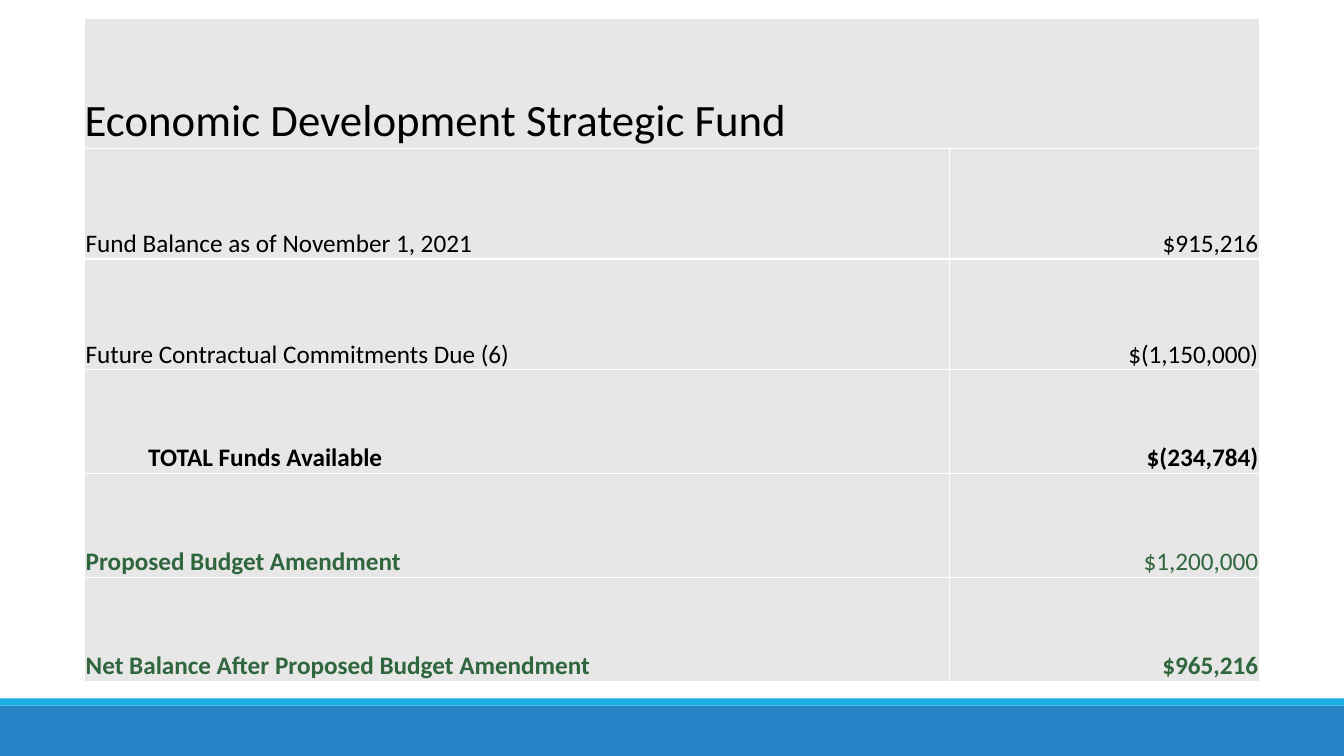
"""Build the Economic Development Strategic Fund slide."""
import dataclasses

import lxml.etree
import pptx
import pptx.dml.color
import pptx.enum.shapes
import pptx.enum.text
import pptx.oxml.ns
import pptx.util

EMU_PER_PX = 9144
FONT = "Calibri"
BLACK, GREEN, WHITE, GREY = "000000", "2F663E", "FFFFFF", "E7E7E7"
COLUMN_WIDTHS = (858, 307)
TITLE_HEIGHT = 129


@dataclasses.dataclass(frozen=True)
class Band:
    top: int
    height: int
    color: str


@dataclasses.dataclass(frozen=True)
class FundRow:
    label: str
    amount: str
    height: int
    color: str = BLACK
    label_bold: bool = False
    amount_bold: bool = False
    indent: int = 0


BANDS = (Band(700, 50, "2683C6"), Band(693, 7, "1CADE4"))
FUND_ROWS = (
    FundRow("Fund Balance as of November 1, 2021", "$915,216", 110),
    FundRow("Future Contractual Commitments Due (6)", "$(1,150,000)", 110),
    FundRow("TOTAL Funds Available", "$(234,784)", 103,
            label_bold=True, amount_bold=True, indent=62),
    FundRow("Proposed Budget Amendment", "$1,200,000", 103, GREEN, label_bold=True),
    FundRow("Net Balance After Proposed Budget Amendment", "$965,216", 103, GREEN,
            label_bold=True, amount_bold=True),
)


def px(length: int) -> pptx.util.Emu:
    """Turn px into EMU."""
    return pptx.util.Emu(length * EMU_PER_PX)


def rgb(color: str) -> pptx.dml.color.RGBColor:
    """Turn a hex string into a colour."""
    return pptx.dml.color.RGBColor.from_string(color)


def draw_band(slide, band: Band, width: int) -> None:
    """Draw one footer band across the slide."""
    shape = slide.shapes.add_shape(
        pptx.enum.shapes.MSO_SHAPE.RECTANGLE, px(0), px(band.top), px(width), px(band.height))
    shape.shadow.inherit = False
    shape.fill.solid()
    shape.fill.fore_color.rgb = rgb(band.color)
    shape.line.fill.background()


def style_cell(cell, margin: int) -> None:
    """Give a cell its borders, fill, margins and anchor."""
    qn = pptx.oxml.ns.qn
    properties = cell._tc.get_or_add_tcPr()
    for side in ("a:lnL", "a:lnR", "a:lnT", "a:lnB"):
        line = lxml.etree.SubElement(properties, qn(side), w=str(pptx.util.Pt(1)))
        fill = lxml.etree.SubElement(line, qn("a:solidFill"))
        lxml.etree.SubElement(fill, qn("a:srgbClr"), val=WHITE)
    cell.fill.solid()
    cell.fill.fore_color.rgb = rgb(GREY)
    cell.margin_left = cell.margin_right = cell.margin_top = px(margin)
    cell.margin_bottom = px(0)
    cell.vertical_anchor = pptx.enum.text.MSO_ANCHOR.BOTTOM


def write_cell(cell, text: str, size: int, color: str = BLACK, bold: bool = False,
               right: bool = False, indent: int = 0) -> None:
    """Write one run of text into a cell."""
    paragraph = cell.text_frame.paragraphs[0]
    alignment = pptx.enum.text.PP_ALIGN
    paragraph.alignment = alignment.RIGHT if right else alignment.LEFT
    if indent:
        paragraph._p.get_or_add_pPr().set("marL", str(px(indent)))
    run = paragraph.add_run()
    run.text = text
    run.font.name = FONT
    run.font.size = pptx.util.Pt(size)
    run.font.bold = bold
    run.font.color.rgb = rgb(color)


def draw_fund_table(slide) -> None:
    """Draw the fund table with its merged title row."""
    heights = (TITLE_HEIGHT, *(row.height for row in FUND_ROWS))
    table = slide.shapes.add_table(
        len(heights), len(COLUMN_WIDTHS), px(84), px(18),
        px(sum(COLUMN_WIDTHS)), px(sum(heights))).table
    table.first_row = table.horz_banding = False
    for column, width in zip(table.columns, COLUMN_WIDTHS):
        column.width = px(width)
    for index, height in enumerate(heights):
        table.rows[index].height = px(height)
        for cell in table.rows[index].cells:
            style_cell(cell, 1 if index else 0)
    title = table.cell(0, 0)
    title.merge(table.cell(0, 1))
    write_cell(title, "Economic Development Strategic Fund", 32)
    for index, row in enumerate(FUND_ROWS, start=1):
        write_cell(table.cell(index, 0), row.label, 18, row.color, row.label_bold,
                   indent=row.indent)
        write_cell(table.cell(index, 1), row.amount, 18, row.color, row.amount_bold,
                   right=True)


def main() -> None:
    """Build and save the presentation."""
    width, height = 1333, 750
    presentation = pptx.Presentation()
    presentation.slide_width, presentation.slide_height = px(width), px(height)
    slide = presentation.slides.add_slide(presentation.slide_layouts[6])
    for band in BANDS:
        draw_band(slide, band, width)
    draw_fund_table(slide)
    presentation.save("out.pptx")


if __name__ == "__main__":
    main()
